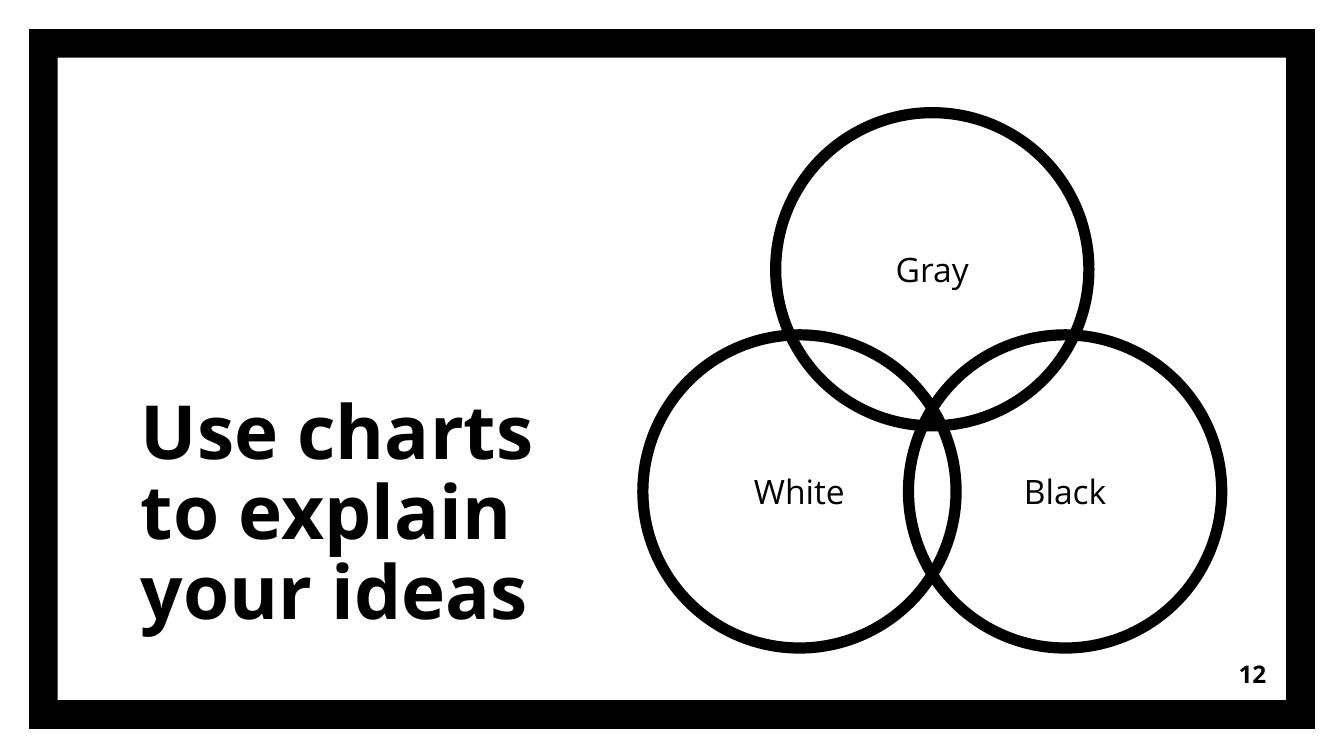
"""Build a slide with a headline and three overlapping circles."""
from pptx import Presentation
from pptx.dml.color import RGBColor
from pptx.enum.shapes import MSO_SHAPE
from pptx.enum.text import MSO_ANCHOR, MSO_AUTO_SIZE, PP_ALIGN
from pptx.util import Cm, Pt

FRAME, OVAL = MSO_SHAPE.FRAME, MSO_SHAPE.OVAL
MIDDLE, BOTTOM = MSO_ANCHOR.MIDDLE, MSO_ANCHOR.BOTTOM
LEFT, CENTER, RIGHT = PP_ALIGN.LEFT, PP_ALIGN.CENTER, PP_ALIGN.RIGHT
FIXED = MSO_AUTO_SIZE.NONE
FONT = "Open Sans"
INK = "000000"


def paint(form, color):
    form.solid()
    form.fore_color.rgb = RGBColor.from_string(color)


def write(shape, text, size, bold, align, anchor):
    frame = shape.text_frame
    frame.text = text
    frame.word_wrap = True
    frame.auto_size = FIXED
    frame.vertical_anchor = anchor
    frame.margin_left = frame.margin_right = Cm(0.25)
    frame.margin_top = frame.margin_bottom = Cm(0.25)
    line = frame.paragraphs[0]
    line.alignment = align
    font = line.runs[0].font
    font.name, font.size, font.bold = FONT, Pt(size), bold
    paint(font.fill, INK)
    return line


deck = Presentation()
deck.slide_width, deck.slide_height = Cm(25.4), Cm(14.29)
slide = deck.slides.add_slide(deck.slide_layouts[5])
shapes = slide.shapes
paint(slide.background.fill, "FFFFFF")

title = shapes.title
title.left, title.top = Cm(2.41), Cm(8.48)
title.width, title.height = Cm(8.94), Cm(3.78)
head = write(title, "Use charts to explain your ideas", 40, True, LEFT, BOTTOM)
head.line_spacing = 0.89

border = shapes.add_shape(FRAME, Cm(0.55), Cm(0.55), Cm(24.3), Cm(13.23))
border.adjustments[0] = 0.041
border.shadow.inherit = False
paint(border.fill, INK)
border.line.fill.background()

size = Cm(5.92)
for name, x, y in (("Gray", 14.66, 2.13), ("White", 12.15, 6.33), ("Black", 17.17, 6.33)):
    ring = shapes.add_shape(OVAL, Cm(x), Cm(y), size, size)
    ring.shadow.inherit = False
    ring.fill.background()
    paint(ring.line.fill, INK)
    ring.line.width = Pt(6)
    write(ring, name, 18, False, CENTER, MIDDLE)

number = shapes.add_textbox(Cm(22.66), Cm(12.19), Cm(1.52), Cm(1.09))
write(number, "12", 13, True, RIGHT, MIDDLE)

deck.save("out.pptx")
